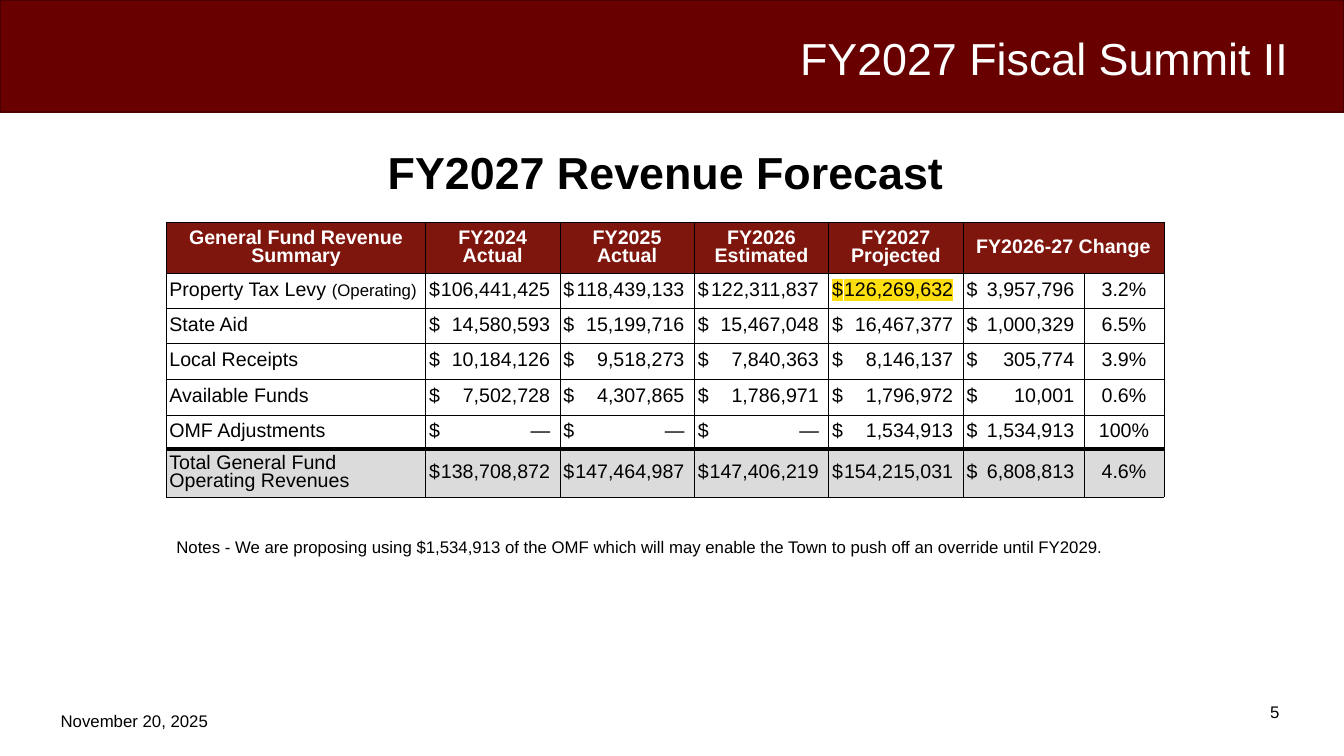
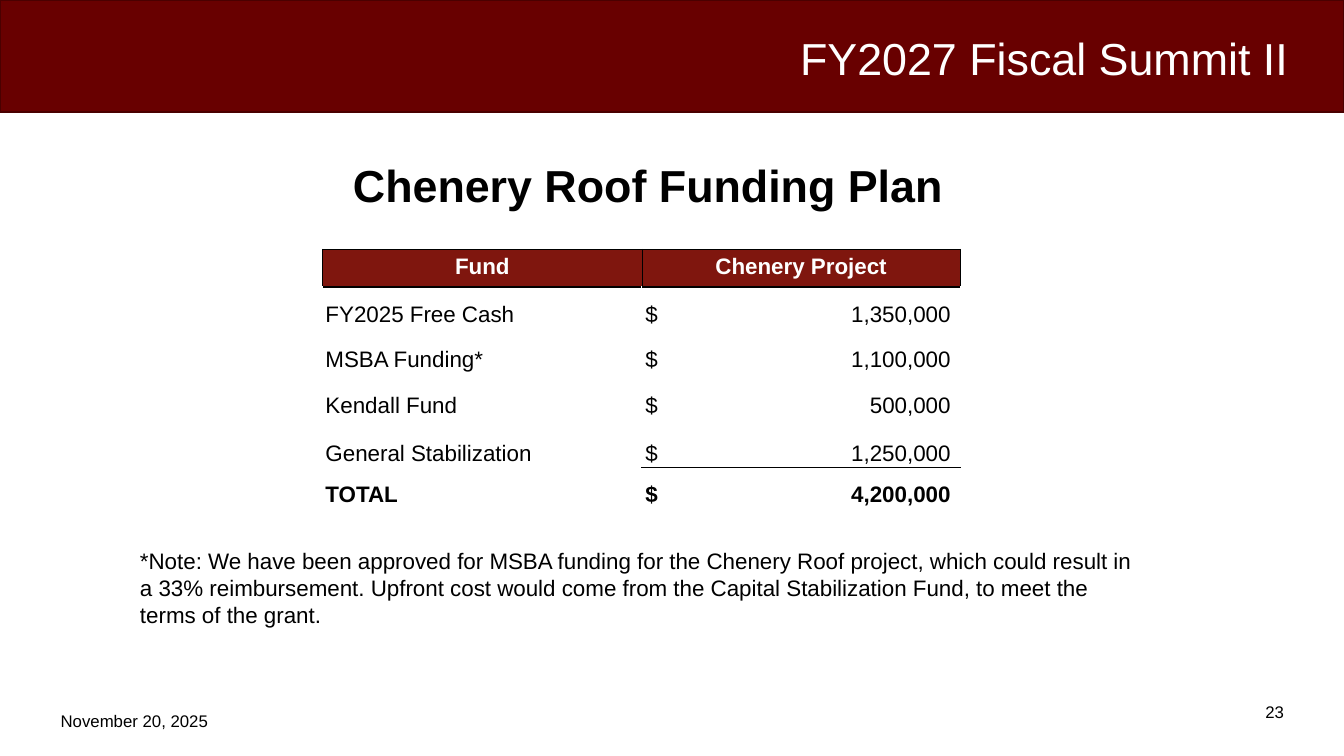
from pptx import Presentation
from pptx.dml.color import RGBColor
from pptx.enum.shapes import MSO_SHAPE
from pptx.enum.text import MSO_ANCHOR, PP_ALIGN
from pptx.util import Pt
from pptx.oxml.ns import qn
from lxml import etree

LEFT, CENTER = PP_ALIGN.LEFT, PP_ALIGN.CENTER
TOP, MIDDLE, BOTTOM = MSO_ANCHOR.TOP, MSO_ANCHOR.MIDDLE, MSO_ANCHOR.BOTTOM

FONT = "Arial"
COLORS = {
    "band": "680000", "band_line": "4A0000", "header": "7F160E",
    "total": "DBDBDB", "highlight": "FFDE0F", "white": "FFFFFF", "black": "000000",
}
SLIDE_W, SLIDE_H = 960, 540
BAND_H = 80
DECK_TITLE = "FY2027 Fiscal Summit II"
DATE = "November 20, 2025"

# Whole numbers are dollar amounts, None is an empty amount.
FORECAST = {
    "page": "5",
    "title": ("FY2027 Revenue Forecast", (119, 98.5, 713, 55)),
    "note": ("Notes - We are proposing using $1,534,913 of the OMF which will may "
             "enable the Town to push off an override until FY2029.",
             (119, 379, 707, 64), 12),
    "table": {
        "at": (119, 159),
        "cols": [185, 96, 96, 96, 96, 86.5, 57],
        "rows": [36.5, 24.5, 25.5, 25.5, 25.5, 24.5, 34],
        "size": 14, "anchor": MIDDLE, "bottom": 0,
        "amount_inset": 9.5,
        "edges": [("black", 0.5), ("black", 0.5)],
        "rules": {(6, c): ("black", 3) for c in range(7)},
        "merge": [(0, 5, 0, 6)],
        "highlight": [(1, 4)],
        "body_fill": "white", "total_fill": "total", "total_bold": False,
        "cells": [
            ["General Fund Revenue Summary", "FY2024 Actual", "FY2025 Actual",
             "FY2026 Estimated", "FY2027 Projected", "FY2026-27 Change", ""],
            [("Property Tax Levy ", "(Operating)"),
             106441425, 118439133, 122311837, 126269632, 3957796, "3.2%"],
            ["State Aid", 14580593, 15199716, 15467048, 16467377, 1000329, "6.5%"],
            ["Local Receipts", 10184126, 9518273, 7840363, 8146137, 305774, "3.9%"],
            ["Available Funds", 7502728, 4307865, 1786971, 1796972, 10001, "0.6%"],
            ["OMF Adjustments", None, None, None, 1534913, 1534913, "100%"],
            ["Total General Fund Operating Revenues",
             138708872, 147464987, 147406219, 154215031, 6808813, "4.6%"],
        ],
    },
}
ROOF = {
    "page": "23",
    "title": ("Chenery Roof Funding Plan", (79, 108, 768, 55)),
    "note": ("*Note: We have been approved for MSBA funding for the Chenery Roof "
             "project, which could result in a 33% reimbursement. Upfront cost would "
             "come from the Capital Stabilization Fund, to meet the terms of the grant.",
             (93, 386.5, 731, 76), 16),
    "table": {
        "at": (230.5, 178),
        "cols": [228, 227.5],
        "rows": [27, 29.5, 32.5, 32.5, 34.5, 29.5],
        "size": 16, "anchor": BOTTOM, "bottom": 1.5,
        "amount_inset": 9.5,
        "edges": [("black", 0.5), ("white", 1)],
        "rules": {(1, 0): ("black", 1), (1, 1): ("black", 1), (5, 1): ("black", 1)},
        "merge": [], "highlight": [],
        "body_fill": None, "total_fill": None, "total_bold": True,
        "cells": [
            ["Fund", "Chenery Project"],
            ["FY2025 Free Cash", 1350000],
            ["MSBA Funding*", 1100000],
            ["Kendall Fund", 500000],
            ["General Stabilization", 1250000],
            ["TOTAL", 4200000],
        ],
    },
}


def rgb(name):
    return RGBColor.from_string(COLORS[name])


def add_run(p, text, size, color="black", bold=False, highlight=None):
    r = p.add_run()
    r.text = text
    r.font.size = Pt(size)
    r.font.bold = bold
    r.font.color.rgb = rgb(color)
    if highlight:
        mark = etree.SubElement(r.font._element, qn("a:highlight"))
        etree.SubElement(mark, qn("a:srgbClr"), val=COLORS[highlight])
    r.font.name = FONT


def add_text(s, text, box, size, color="black", bold=False, align=LEFT,
             anchor=TOP, spacing=1.0, insets=(4.5, 7)):
    tf = s.shapes.add_textbox(*map(Pt, box)).text_frame
    tf.word_wrap = True
    tf.vertical_anchor = anchor
    tf.margin_left = tf.margin_right = Pt(7)
    tf.margin_top, tf.margin_bottom = map(Pt, insets)
    p = tf.paragraphs[0]
    p.alignment = align
    p.line_spacing = spacing
    add_run(p, text, size, color, bold)


def add_frame(s, page):
    """Add the band, deck title, page number and date that all slides share."""
    band = s.shapes.add_shape(MSO_SHAPE.RECTANGLE, 0, 0, Pt(SLIDE_W), Pt(BAND_H))
    band.shadow.inherit = False
    band.fill.solid()
    band.fill.fore_color.rgb = rgb("band")
    band.line.color.rgb = rgb("band_line")
    band.line.width = Pt(1)
    add_text(s, DECK_TITLE, (564.5, 22.5, 377, 42.5), 32, "white", spacing=0.87)
    add_text(s, page, (884, 497, 53, 25), 12, align=CENTER)
    add_text(s, DATE, (25, 503, 142, 25), 12, align=CENTER)


def set_borders(cell, edges):
    tcPr = cell._tc.get_or_add_tcPr()
    for side in "LRTB":
        color, width = edges[side]
        ln = etree.SubElement(tcPr, qn(f"a:ln{side}"), w=str(Pt(width)))
        fill = etree.SubElement(ln, qn("a:solidFill"))
        etree.SubElement(fill, qn("a:srgbClr"), val=COLORS[color])


def add_right_tab(p, pos):
    tabs = etree.SubElement(p._p.get_or_add_pPr(), qn("a:tabLst"))
    etree.SubElement(tabs, qn("a:tab"), pos=str(Pt(pos)), algn="r")


def fill_cell(cell, value, row, col, spec):
    header, total = row == 0, row == len(spec["rows"]) - 1
    edge = spec["edges"][0 if header else 1]
    rules = spec["rules"]
    set_borders(cell, {"L": edge, "R": edge, "T": rules.get((row, col), edge),
                       "B": rules.get((row + 1, col), edge)})
    fill = "header" if header else spec["total_fill" if total else "body_fill"]
    if fill:
        cell.fill.solid()
        cell.fill.fore_color.rgb = rgb(fill)
    else:
        cell.fill.background()

    cell.vertical_anchor = MIDDLE if header else spec["anchor"]
    cell.margin_left = cell.margin_right = Pt(2)
    cell.margin_top, cell.margin_bottom = 0, Pt(0 if header else spec["bottom"])
    p = cell.text_frame.paragraphs[0]
    p.line_spacing = 0.83
    size = spec["size"]
    if isinstance(value, (int, type(None))):
        cell.margin_left, cell.margin_right = Pt(2.5), Pt(1)
        add_right_tab(p, spec["cols"][col] - spec["amount_inset"])
        amount = "—" if value is None else f"{value:,}"
        mark = "highlight" if (row, col) in spec["highlight"] else None
        add_run(p, f"$\t{amount}", size, bold=total and spec["total_bold"], highlight=mark)
    elif isinstance(value, tuple):
        main, small = value
        add_run(p, main, size)
        add_run(p, small, size - 2)
    elif value:
        p.alignment = CENTER if header or col else LEFT
        add_run(p, value, size, "white" if header else "black",
                header or (total and spec["total_bold"]))


def add_fund_table(s, spec):
    cols, rows = spec["cols"], spec["rows"]
    box = (*spec["at"], sum(cols), sum(rows))
    table = s.shapes.add_table(len(rows), len(cols), *map(Pt, box)).table
    table.first_row = table.horz_banding = False
    for column, width in zip(table.columns, cols):
        column.width = Pt(width)
    for line, height in zip(table.rows, rows):
        line.height = Pt(height)
    for row, values in enumerate(spec["cells"]):
        for col, value in enumerate(values):
            fill_cell(table.cell(row, col), value, row, col, spec)
    for r1, c1, r2, c2 in spec["merge"]:
        table.cell(r1, c1).merge(table.cell(r2, c2))


def main():
    prs = Presentation()
    prs.slide_width, prs.slide_height = Pt(SLIDE_W), Pt(SLIDE_H)
    for content in (FORECAST, ROOF):
        s = prs.slides.add_slide(prs.slide_layouts[6])
        add_frame(s, content["page"])
        title, box = content["title"]
        add_text(s, title, box, 32, bold=True, align=CENTER, anchor=MIDDLE,
                 spacing=0.87, insets=(2, 3.5))
        add_fund_table(s, content["table"])
        add_text(s, *content["note"])
    prs.save("out.pptx")


if __name__ == "__main__":
    main()
